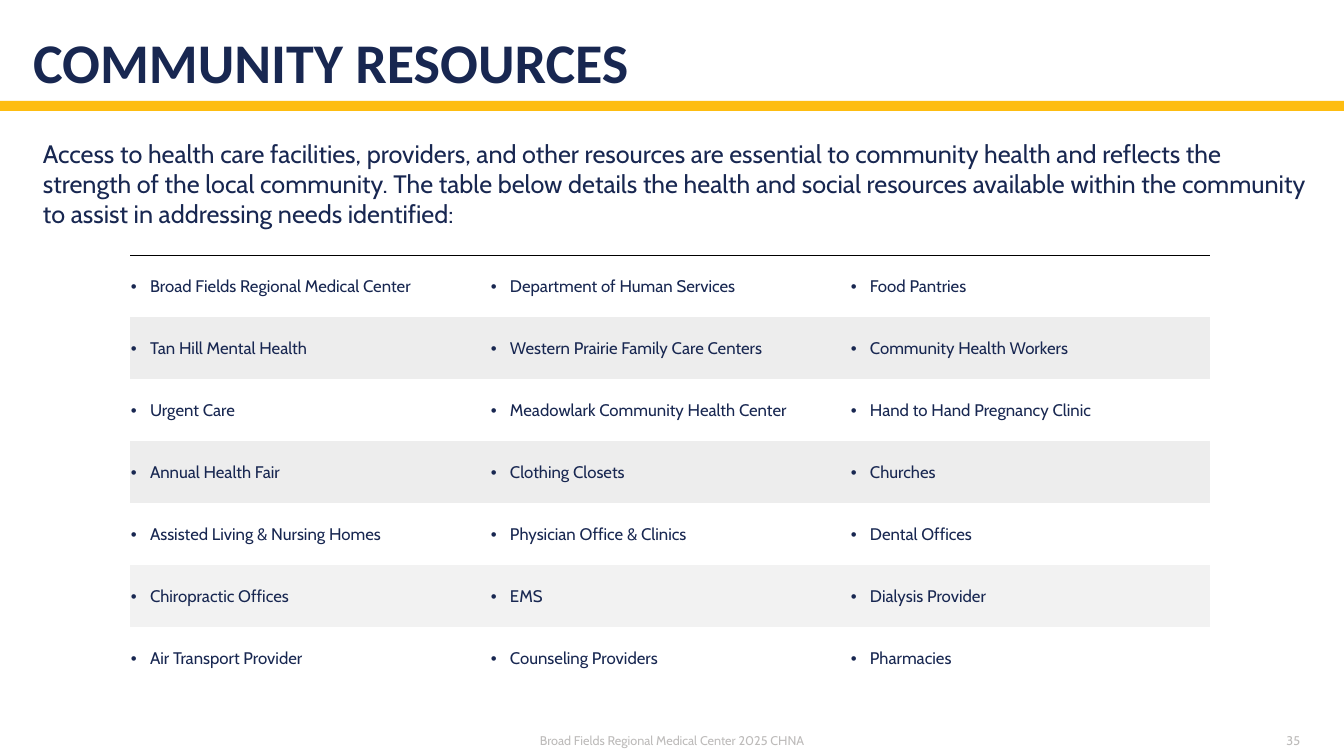
from lxml import etree
from pptx import Presentation
from pptx import util as u
from pptx.dml.color import RGBColor
from pptx.enum import shapes, text
from pptx.oxml import ns

PX = 914400 / 100.8
NAVY = RGBColor(0x18, 0x27, 0x51)
GOLD = RGBColor(0xFE, 0xBD, 0x11)
SILVER = RGBColor(0xBD, 0xBB, 0xBA)
BAND = RGBColor(0xED, 0xED, 0xED)
PALE_BAND = RGBColor(0xF2, 0xF2, 0xF2)
ROW_FILLS = [None, BAND, None, BAND, None, PALE_BAND, None]
NO_GRID_STYLE = "{2D5ABB26-0587-4C30-8999-92F81FD0307C}"
CENTER_NAME = "Broad Fields Regional Medical Center"
INTRO = (
    "Access to health care facilities, providers, and other resources are essential to community "
    "health and reflects the strength of the local community. The table below details the health "
    "and social resources available within the community to assist in addressing needs identified:"
)
RESOURCES = [
    (CENTER_NAME, "Department of Human Services", "Food Pantries"),
    ("Tan Hill Mental Health", "Western Prairie Family Care Centers", "Community Health Workers"),
    ("Urgent Care", "Meadowlark Community Health Center", "Hand to Hand Pregnancy Clinic"),
    ("Annual Health Fair", "Clothing Closets", "Churches"),
    ("Assisted Living & Nursing Homes", "Physician Office & Clinics", "Dental Offices"),
    ("Chiropractic Offices", "EMS", "Dialysis Provider"),
    ("Air Transport Provider", "Counseling Providers", "Pharmacies"),
]


def px(length):
    return u.Emu(round(length * PX))


def place(box):
    return [px(length) for length in box]


def add_xml(parent, tag, **attributes):
    return etree.SubElement(parent, ns.qn(tag), attributes)


def style(para, size, color, face="Cabin", bold=False):
    for span in para.runs:
        span.font.name = face
        span.font.size = u.Pt(size)
        span.font.bold = bold
        span.font.color.rgb = color


def add_heading(page, box):
    left, top, width, height = box
    rule = page.shapes.add_shape(
        shapes.MSO_SHAPE.RECTANGLE, *place((0, top + height, 1344, 10)))
    rule.shadow.inherit = False
    rule.fill.solid()
    rule.fill.fore_color.rgb = GOLD
    rule.line.fill.background()

    title = page.shapes.title
    title.left, title.top, title.width, title.height = place(box)
    frame = title.text_frame
    frame.text = "COMMUNITY RESOURCES"
    frame.margin_left = frame.margin_right = 0
    frame.margin_top = frame.margin_bottom = px(5)
    frame.vertical_anchor = text.MSO_ANCHOR.BOTTOM
    frame.auto_size = text.MSO_AUTO_SIZE.NONE
    para = frame.paragraphs[0]
    para.alignment = text.PP_ALIGN.LEFT
    para.line_spacing = 0.9
    style(para, 40, NAVY, "Calibri", True)


def add_text(page, box, words, size, color, align, anchor):
    frame = page.shapes.add_textbox(*place(box)).text_frame
    frame.word_wrap = True
    frame.vertical_anchor = anchor
    frame.text = words
    frame.paragraphs[0].alignment = align
    style(frame.paragraphs[0], size, color)


def add_footer(page, box):
    left, top, width, height = box
    parts = [
        (left, 806, f"{CENTER_NAME} 2025 CHNA", text.PP_ALIGN.CENTER),
        (left + width - 101, 101, "35", text.PP_ALIGN.RIGHT),
    ]
    for start, span_width, words, align in parts:
        add_text(page, (start, top, span_width, height), words, 9, SILVER,
                 align, text.MSO_ANCHOR.MIDDLE)


def fill_cell(cell, words, fill):
    cell.margin_left = cell.margin_right = cell.margin_top = px(1)
    cell.margin_bottom = 0
    cell.vertical_anchor = text.MSO_ANCHOR.MIDDLE
    if fill is None:
        cell.fill.background()
    else:
        cell.fill.solid()
        cell.fill.fore_color.rgb = fill
    cell.text_frame.text = words
    para = cell.text_frame.paragraphs[0]
    properties = para._p.get_or_add_pPr()
    properties.set("marL", str(px(19)))
    properties.set("indent", str(px(-19)))
    add_xml(properties, "a:buFont", typeface="Arial")
    add_xml(properties, "a:buChar", char="•")
    style(para, 12, NAVY)


def add_top_border(cell):
    properties = cell._tc.get_or_add_tcPr()
    border = add_xml(properties, "a:lnT", w=str(u.Pt(0.5)))
    add_xml(add_xml(border, "a:solidFill"), "a:srgbClr", val="000000")
    properties.insert(0, border)


def add_resources(page, box):
    left, top, width, height = box
    table = page.shapes.add_table(len(RESOURCES), len(RESOURCES[0]), *place(box)).table
    table.first_row = table.horz_banding = False
    table._tbl.tblPr.find(ns.qn("a:tableStyleId")).text = NO_GRID_STYLE
    for column in table.columns:
        column.width = px(width / len(RESOURCES[0]))
    for row, names, fill in zip(table.rows, RESOURCES, ROW_FILLS):
        row.height = px(height / len(RESOURCES))
        for cell, name in zip(row.cells, names):
            fill_cell(cell, name, fill)
    for cell in table.rows[0].cells:
        add_top_border(cell)


def main():
    deck = Presentation()
    deck.slide_width, deck.slide_height = px(1344), px(756)
    page = deck.slides.add_slide(deck.slide_layouts[5])
    add_heading(page, (33, 0, 1277, 101))
    add_footer(page, (269, 731, 1041, 20))
    add_resources(page, (130, 255, 1080, 434))
    add_text(page, (33, 133, 1292, 102), INTRO, 18, NAVY,
             text.PP_ALIGN.LEFT, text.MSO_ANCHOR.TOP)
    deck.save("out.pptx")


if __name__ == "__main__":
    main()
